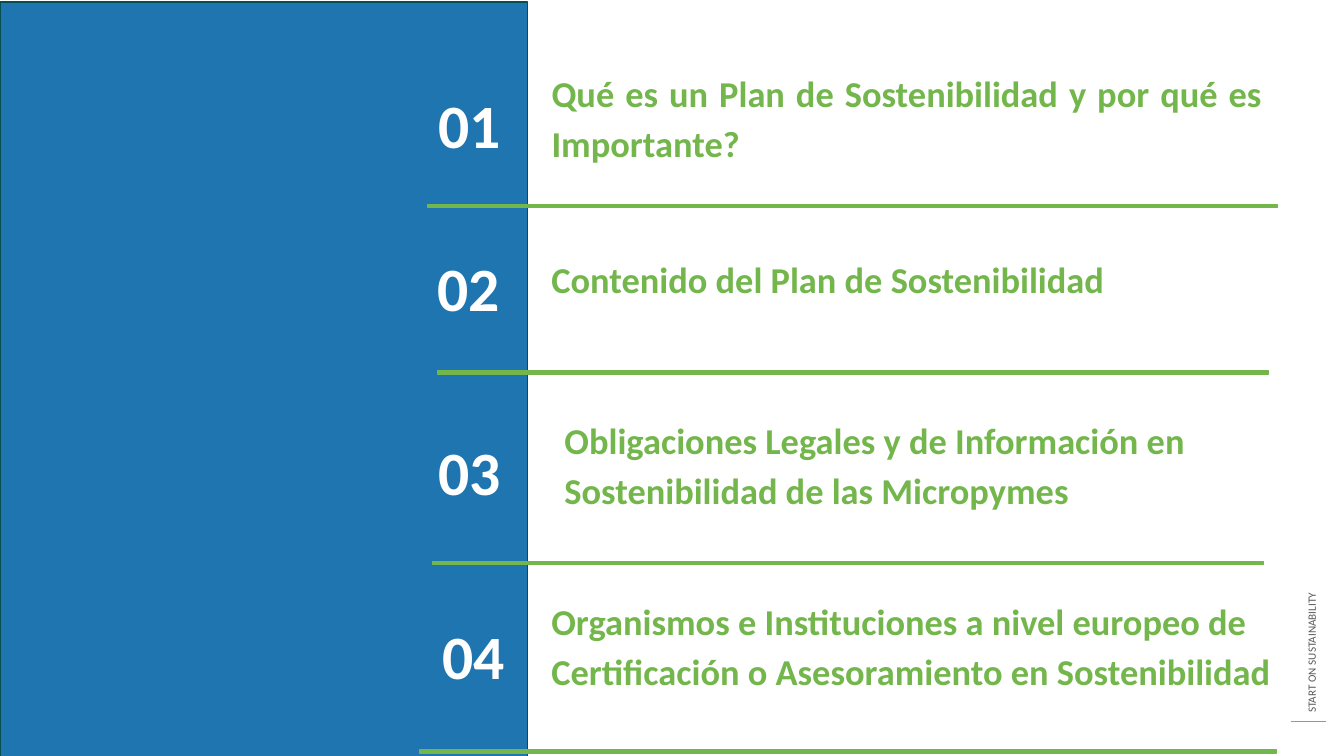
from pptx import Presentation
from pptx.dml.color import RGBColor
from pptx.enum.shapes import MSO_CONNECTOR as Connector, MSO_SHAPE as Shape
from pptx.enum.text import MSO_ANCHOR as Anchor, MSO_AUTO_SIZE as AutoSize, PP_ALIGN as Align
from pptx.oxml.ns import qn
from pptx.util import Pt
from lxml import etree

PX = 9144  # 100 px to the inch
GREEN, BLUE, WHITE, GREY, DARK = "73B64B", "1E75B0", "FFFFFF", "595959", "054F50"
color = RGBColor.from_string


def add_bar(box, fill, line):
    bar = slide.shapes.add_shape(Shape.RECTANGLE, *[n * PX for n in box])
    bar.shadow.inherit = False
    bar.fill.solid()
    bar.fill.fore_color.rgb = color(fill)
    bar.line.color.rgb = color(line)
    bar.line.width = Pt(1)


def write(shape, box, text, size, ink, bold=True, spacing=1.0):
    """Place a text shape and fill it with one formatted paragraph."""
    shape.left, shape.top, shape.width, shape.height = [n * PX for n in box]
    frame = shape.text_frame
    frame.text = text
    frame.word_wrap = True
    frame.auto_size = AutoSize.NONE
    frame.vertical_anchor = Anchor.TOP
    paragraph = frame.paragraphs[0]
    paragraph.alignment = Align.LEFT
    paragraph.line_spacing = spacing
    paragraph.space_before = Pt(0)
    paragraph.font.name = "Calibri"
    paragraph.font.size = Pt(size)
    paragraph.font.bold = bold
    paragraph.font.color.rgb = color(ink)
    return paragraph


presentation = Presentation()
presentation.slide_width = 1333 * PX
presentation.slide_height = 750 * PX
slide = presentation.slides.add_slide(presentation.slide_layouts.get_by_name("Comparison"))
placeholders = {p.placeholder_format.idx: p for p in slide.placeholders}
first_heading, first_number = placeholders[1], placeholders[3]
for unused in (0, 2, 4):
    element = placeholders[unused].element
    element.getparent().remove(element)

# Side label, its rule and the blue panel
label = slide.shapes.add_textbox(0, 0, PX, PX)
write(label, (1078, 482, 446, 24), "START ON SUSTAINABILITY", 8, GREY, bold=False)
label.rotation = 270
rule = slide.shapes.add_connector(
    Connector.STRAIGHT, 1280 * PX, 716 * PX, 1315 * PX, 716 * PX)
rule.line.color.rgb = color(GREEN)
rule.line.width = Pt(1)
etree.SubElement(rule.element.spPr, qn("a:effectLst"))
add_bar((0, 2, 523, 750), BLUE, DARK)

# Agenda: number, number box, heading, heading box, line spacing, divider
agenda = [
    ("01", (425, 59, 136, 140), "Qué es un Plan de Sostenibilidad y por qué es Importante?",
     (537, 59, 726, 122), 1.15, (424, 203, 843, 3)),
    ("02", (424, 221, 121, 107), "Contenido del Plan de Sostenibilidad",
     (537, 250, 741, 60), 1.0, (434, 368, 824, 3)),
    ("03", (425, 404, 84, 80),
     "Obligaciones Legales y de Información en Sostenibilidad de las Micropymes",
     (550, 403, 745, 122), 1.15, (429, 557, 824, 3)),
    ("04", (429, 586, 92, 80),
     "Organismos e Instituciones a nivel europeo de Certificación o Asesoramiento en Sostenibilidad",
     (537, 583, 772, 88), 1.15, (416, 744, 850, 3)),
]
for number, number_box, heading, heading_box, spacing, divider in agenda:
    if number == "01":
        heading_shape, number_shape = first_heading, first_number
        for shape in (heading_shape, number_shape):
            slide.shapes._spTree.append(shape.element)  # bring in front of the panel
    else:
        heading_shape, number_shape = [
            slide.shapes.add_textbox(0, 0, PX, PX) for _ in range(2)]
    paragraph = write(heading_shape, heading_box, heading, 26, GREEN, spacing=spacing)
    if number == "01":
        paragraph.alignment = Align.JUSTIFY
        paragraph.space_before = Pt(8)
    write(number_shape, number_box, number, 44, WHITE, spacing=1.3)
    add_bar(divider, GREEN, GREEN)

presentation.save("out.pptx")
